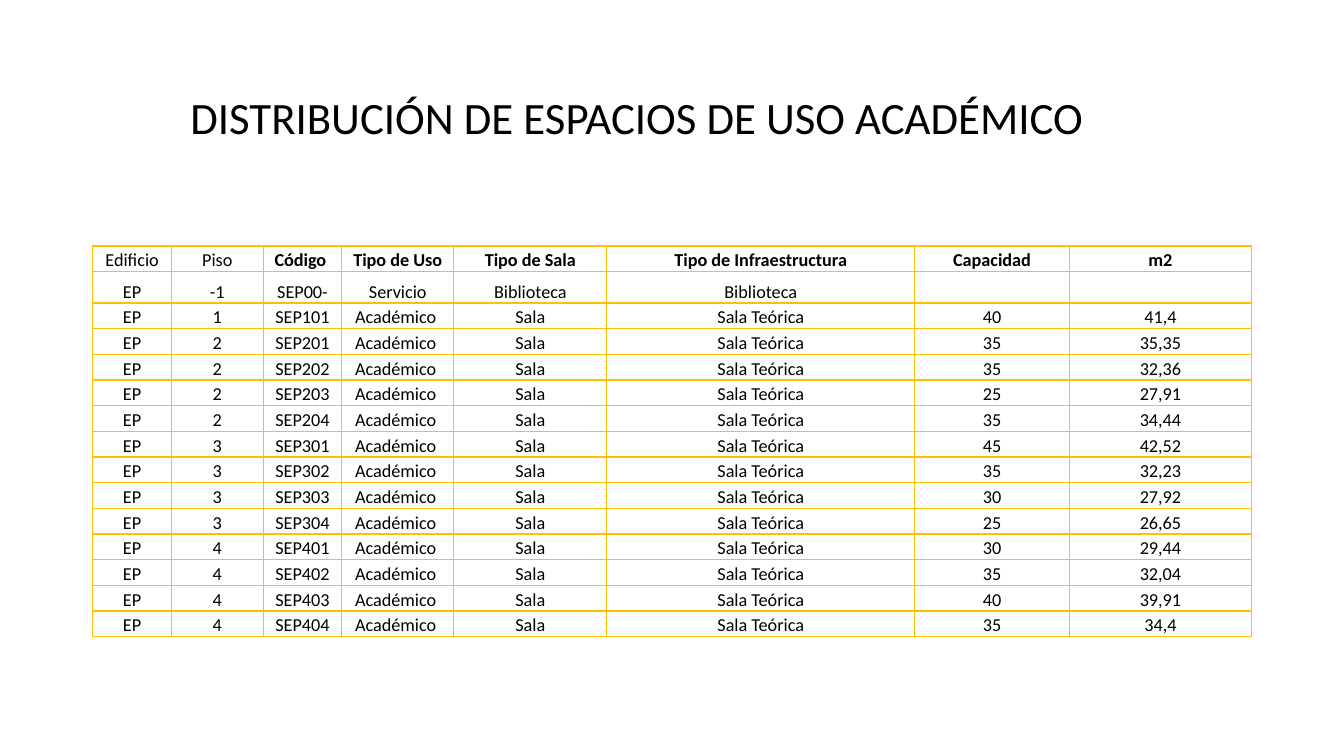
from lxml.etree import SubElement
from pptx import Presentation
from pptx.dml.color import RGBColor
from pptx.enum.text import MSO_ANCHOR, MSO_AUTO_SIZE, PP_ALIGN
from pptx.oxml.ns import qn
from pptx.util import Inches, Pt

BLACK = RGBColor(0x00, 0x00, 0x00)
AMBER = RGBColor(0xFF, 0xC0, 0x00)
FONT = "Calibri"

TITLE = "DISTRIBUCIÓN DE ESPACIOS DE USO ACADÉMICO"
TITLE_BOX = (1.79, 0.8, 9.76, 0.65)
TABLE_LEFT, TABLE_TOP, TABLE_HEIGHT = 0.92, 2.44, 3.88
COLUMNS = [0.78, 0.91, 0.78, 1.11, 1.52, 3.05, 1.54, 1.8]
LIBRARY_ROW, LIBRARY_HEIGHT = 1, 0.31
HEADERS = ["Edificio", "Piso", "Código ", "Tipo de Uso", "Tipo de Sala",
           "Tipo de Infraestructura", "Capacidad", "m2"]
FIRST_BOLD_HEADER = 2
LIBRARY = ["EP", "-1", "SEP00-", "Servicio", "Biblioteca", "Biblioteca", "", ""]
ROOMS = [
    ("101", "40", "41,4"),
    ("201", "35", "35,35"),
    ("202", "35", "32,36"),
    ("203", "25", "27,91"),
    ("204", "35", "34,44"),
    ("301", "45", "42,52"),
    ("302", "35", "32,23"),
    ("303", "30", "27,92"),
    ("304", "25", "26,65"),
    ("401", "30", "29,44"),
    ("402", "35", "32,04"),
    ("403", "40", "39,91"),
    ("404", "35", "34,4"),
]


def write(tf, text, size, bold=False, align=None, spacing=None, after=None):
    p = tf.paragraphs[0]
    p.alignment = align
    p.line_spacing = spacing
    p.space_after = after
    if text:
        r = p.add_run()
        r.text = text
        r.font.name = FONT
        r.font.size = Pt(size)
        r.font.bold = bold
        r.font.color.rgb = BLACK


def add_title(s):
    sp = s.shapes.add_textbox(*map(Inches, TITLE_BOX))
    tf = sp.text_frame
    tf.word_wrap = True
    tf.auto_size = MSO_AUTO_SIZE.SHAPE_TO_FIT_TEXT
    write(tf, TITLE, 32, spacing=1.07, after=Pt(8))


def set_borders(cell, color, width):
    tcPr = cell._tc.get_or_add_tcPr()
    for side in ("a:lnL", "a:lnR", "a:lnT", "a:lnB"):
        ln = SubElement(tcPr, qn(side), w=str(Pt(width)))
        fill = SubElement(ln, qn("a:solidFill"))
        SubElement(fill, qn("a:srgbClr"), val=str(color))


def format_cell(cell, text, bold):
    cell.vertical_anchor = MSO_ANCHOR.BOTTOM
    cell.margin_left = cell.margin_right = cell.margin_top = Inches(0.01)
    cell.margin_bottom = 0
    set_borders(cell, AMBER, 1)
    cell.fill.background()
    write(cell.text_frame, text, 13, bold=bold, align=PP_ALIGN.CENTER)


def add_room_table(s):
    rooms = [["EP", number[0], f"SEP{number}", "Académico ", "Sala",
              "Sala Teórica", capacity, area]
             for number, capacity, area in ROOMS]
    rows = [HEADERS, LIBRARY] + rooms
    table = s.shapes.add_table(
        len(rows), len(COLUMNS), Inches(TABLE_LEFT), Inches(TABLE_TOP),
        Inches(sum(COLUMNS)), Inches(TABLE_HEIGHT)).table
    table.first_row = False
    table.horz_banding = False
    for column, width in zip(table.columns, COLUMNS):
        column.width = Inches(width)
    row_height = (TABLE_HEIGHT - LIBRARY_HEIGHT) / (len(rows) - 1)
    for i, values in enumerate(rows):
        height = LIBRARY_HEIGHT if i == LIBRARY_ROW else row_height
        table.rows[i].height = Inches(height)
        for j, text in enumerate(values):
            bold = i == 0 and j >= FIRST_BOLD_HEADER
            format_cell(table.cell(i, j), text, bold)


def main():
    prs = Presentation()
    prs.slide_width = Inches(13.33)
    prs.slide_height = Inches(7.5)
    s = prs.slides.add_slide(prs.slide_layouts[6])
    add_title(s)
    add_room_table(s)
    prs.save("out.pptx")


if __name__ == "__main__":
    main()
